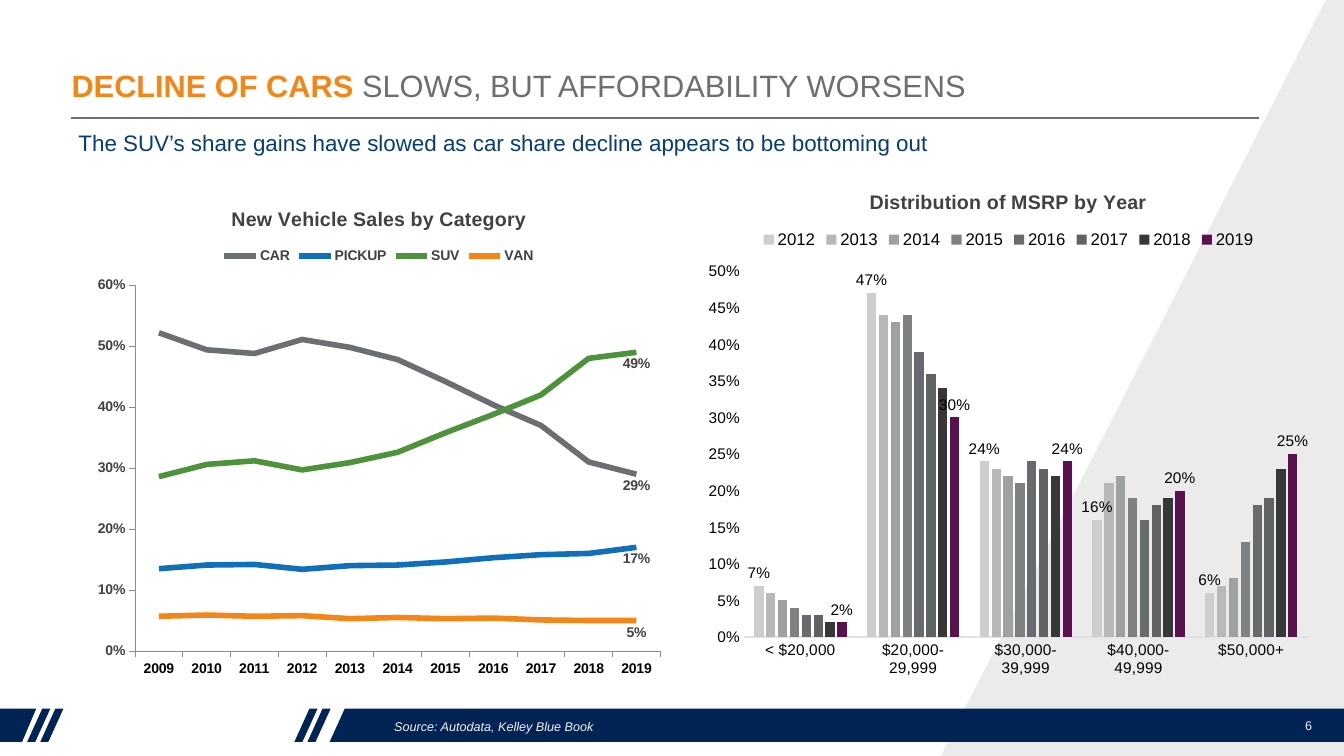
from dataclasses import dataclass

import pptx
import pptx.chart.chart
import pptx.chart.data
import pptx.dml.color
import pptx.enum.chart
import pptx.enum.text
import pptx.oxml.ns
import pptx.slide
import pptx.text.text
import pptx.util
from lxml import etree

Inches = pptx.util.Inches
Pt = pptx.util.Pt
qn = pptx.oxml.ns.qn
ChartType = pptx.enum.chart.XL_CHART_TYPE
LabelPosition = pptx.enum.chart.XL_LABEL_POSITION
TickMark = pptx.enum.chart.XL_TICK_MARK
Anchor = pptx.enum.text.MSO_ANCHOR
Align = pptx.enum.text.PP_ALIGN


@dataclass(frozen=True)
class Theme:
    font: str = "Arial"
    navy: str = "022454"
    blue: str = "073D76"
    orange: str = "F38617"
    grey: str = "6C6F71"
    wedge: str = "D9D9D9"
    pale: str = "F2F2F2"
    ink: str = "000000"
    soft_ink: str = "414141"
    axis: str = "8C8C8C"
    baseline: str = "E2E2E2"
    title_size: float = 22
    subtitle_size: float = 16
    chart_title_size: float = 14
    legend_size: float = 12
    bar_size: float = 11
    line_size: float = 10
    small_size: float = 9


@dataclass(frozen=True)
class Series:
    name: str
    color: str
    values: tuple[float, ...]


@dataclass(frozen=True)
class ChartSpec:
    """One chart; title_at, legend_at and plot_at are inches from the chart's corner."""
    title: str
    kind: ChartType
    box: tuple[float, float, float, float]
    categories: tuple[str, ...]
    series: tuple[Series, ...]
    size: float
    legend_size: float
    color: str
    bold: bool
    tick: TickMark
    top: float
    step: float
    category_line: str
    value_line: str | None
    title_at: tuple[float, float]
    legend_at: tuple[float, float]
    plot_at: tuple[float, float, float, float]


THEME = Theme()
BAND_TOP, BAND_BOTTOM = 7.03, 7.36
STRIPE_LEFTS = (0.27, 0.4, 2.92, 3.05)

SALES = ChartSpec(
    "New Vehicle Sales by Category", ChartType.LINE, (0.86, 1.86, 5.8, 4.95),
    tuple(str(year) for year in range(2009, 2020)),
    (
        Series("CAR", THEME.grey, (0.522, 0.494, 0.488, 0.511, 0.498, 0.478, 0.442, 0.404, 0.37, 0.31, 0.29)),
        Series("PICKUP", "116FBA", (0.135, 0.141, 0.142, 0.134, 0.14, 0.141, 0.146, 0.153, 0.158, 0.16, 0.17)),
        Series("SUV", "4E933B", (0.286, 0.306, 0.312, 0.297, 0.309, 0.326, 0.358, 0.388, 0.42, 0.48, 0.49)),
        Series("VAN", THEME.orange, (0.057, 0.059, 0.057, 0.058, 0.053, 0.055, 0.053, 0.054, 0.051, 0.05, 0.05)),
    ),
    THEME.line_size, THEME.line_size, THEME.soft_ink, True, TickMark.OUTSIDE, 0.6, 0.1,
    THEME.axis, THEME.axis, (1.4, 0.15), (1.32, 0.56), (0.48, 0.97, 5.21, 3.63),
)

PRICES = ChartSpec(
    "Distribution of MSRP by Year", ChartType.COLUMN_CLUSTERED, (6.9, 1.69, 6.21, 5.12),
    ("< $20,000", "$20,000-\n29,999", "$30,000-\n39,999", "$40,000-\n49,999", "$50,000+"),
    (
        Series("2012", "CDCDCE", (0.07, 0.47, 0.24, 0.16, 0.06)),
        Series("2013", "B7B8B9", (0.06, 0.44, 0.23, 0.21, 0.07)),
        Series("2014", "9FA0A1", (0.05, 0.43, 0.22, 0.22, 0.08)),
        Series("2015", "7E8182", (0.04, 0.44, 0.21, 0.19, 0.13)),
        Series("2016", "686B6D", (0.03, 0.39, 0.24, 0.16, 0.18)),
        Series("2017", "606364", (0.03, 0.36, 0.23, 0.18, 0.19)),
        Series("2018", "363838", (0.02, 0.34, 0.22, 0.19, 0.23)),
        Series("2019", "59124D", (0.02, 0.3, 0.24, 0.2, 0.25)),
    ),
    THEME.bar_size, THEME.legend_size, THEME.ink, False, TickMark.NONE, 0.5, 0.05,
    THEME.baseline, None, (1.69, 0.15), (0.62, 0.56), (0.48, 1, 5.59, 3.63),
)


def rgb(color: str) -> pptx.dml.color.RGBColor:
    return pptx.dml.color.RGBColor.from_string(color)


def style(font: pptx.text.text.Font, size: float, color: str, bold: bool = False, italic: bool = False) -> None:
    font.name, font.size, font.bold, font.italic = THEME.font, Pt(size), bold, italic
    font.color.rgb = rgb(color)


def move(shape, left: float, top: float, width: float, height: float) -> None:
    shape.left, shape.top, shape.width, shape.height = map(Inches, (left, top, width, height))


def draw_outline(page: pptx.slide.Slide, points: list[tuple[float, float]], color: str):
    """Draw a filled outline; the builder counts whole hundredths of an inch."""
    start, *others = [(round(x * 100), round(y * 100)) for x, y in points]
    builder = page.shapes.build_freeform(*start, scale=Inches(0.01))
    builder.add_line_segments(others, close=True)
    shape = builder.convert_to_shape()
    shape.shadow.inherit = False
    shape.fill.solid()
    shape.fill.fore_color.rgb = rgb(color)
    shape.line.fill.background()
    return shape


def draw_backdrop(page: pptx.slide.Slide) -> None:
    wedge = draw_outline(page, [(13.15, 0), (13.33, 0), (13.33, 7.5), (9.33, 7.5)], THEME.wedge)
    etree.SubElement(next(wedge.element.iter(qn("a:srgbClr"))), qn("a:alpha"), val="50000")
    bands = [[(x + 0.15, BAND_TOP), (x + 0.23, BAND_TOP), (x + 0.08, BAND_BOTTOM), (x, BAND_BOTTOM)]
             for x in STRIPE_LEFTS]
    bands.append([(0, BAND_TOP), (0.36, BAND_TOP), (0.22, BAND_BOTTOM), (0, BAND_BOTTOM)])
    bands.append([(3.42, BAND_TOP), (13.33, BAND_TOP), (13.33, BAND_BOTTOM), (3.27, BAND_BOTTOM)])
    for band in bands:
        draw_outline(page, band, THEME.navy)
    rule = page.shapes.add_connector(1, Inches(0.7), Inches(1.17), Inches(12.49), Inches(1.17))
    rule.line.color.rgb = rgb(THEME.grey)
    rule.line.width = Pt(1)
    etree.SubElement(rule.element.spPr, qn("a:effectLst"))


def write_title(page: pptx.slide.Slide) -> None:
    title = page.shapes.title
    move(title, 0.61, 0.43, 11.86, 0.83)
    title.text_frame.vertical_anchor = Anchor.MIDDLE
    para = title.text_frame.paragraphs[0]
    para.alignment = Align.LEFT
    for text, color, bold in (("DECLINE OF CARS ", THEME.orange, True),
                              ("SLOWS, BUT AFFORDABILITY WORSENS", THEME.grey, False)):
        span = para.add_run()
        span.text = text
        style(span.font, THEME.title_size, color, bold)


def write_source(page: pptx.slide.Slide) -> None:
    body = page.placeholders[1]
    move(body, 3.81, 7.04, 7.91, 0.33)
    body.text_frame.text = "Source: Autodata, Kelley Blue Book"
    body.text_frame.vertical_anchor = Anchor.MIDDLE
    para = body.text_frame.paragraphs[0]
    properties = para._p.get_or_add_pPr()
    properties.set("marL", "0")
    properties.set("indent", "0")
    etree.SubElement(properties, qn("a:buNone"))
    para.space_before = Pt(0)
    style(para.runs[0].font, THEME.small_size, THEME.pale, italic=True)


def add_text(page: pptx.slide.Slide, text: str, at: tuple[float, float, float, float],
             size: float, color: str, anchor: Anchor, align: Align) -> None:
    box = page.shapes.add_textbox(*map(Inches, at))
    frame = box.text_frame
    frame.word_wrap = True
    frame.vertical_anchor = anchor
    frame.text = text
    frame.paragraphs[0].alignment = align
    style(frame.paragraphs[0].runs[0].font, size, color)


def place_part(part, at: tuple[float, ...], spec: ChartSpec) -> None:
    """Fix a chart part at inches from the chart's corner."""
    for old in part.findall(qn("c:layout")):
        part.remove(old)
    layout = etree.Element(qn("c:layout"))
    manual = etree.SubElement(layout, qn("c:manualLayout"))
    if len(at) == 4:
        etree.SubElement(manual, qn("c:layoutTarget"), val="inner")
    for tag in ("c:xMode", "c:yMode"):
        etree.SubElement(manual, qn(tag), val="edge")
    for tag, length, whole in zip("xywh", at, spec.box[2:] * 2):
        etree.SubElement(manual, qn(f"c:{tag}"), val=str(length / whole))
    overlay = part.find(qn("c:overlay"))
    if overlay is None:
        part.insert(0, layout)
    else:
        overlay.addprevious(layout)


def format_axes(chart: pptx.chart.chart.Chart, spec: ChartSpec) -> None:
    for axis, text, line in ((chart.category_axis, THEME.ink, spec.category_line),
                             (chart.value_axis, spec.color, spec.value_line)):
        axis.has_major_gridlines = False
        axis.major_tick_mark, axis.minor_tick_mark = spec.tick, TickMark.NONE
        style(axis.tick_labels.font, spec.size, text, spec.bold)
        if line:
            axis.format.line.color.rgb = rgb(line)
            axis.format.line.width = Pt(0.75)
        else:
            axis.format.line.fill.background()
    values = chart.value_axis
    values.minimum_scale, values.maximum_scale, values.major_unit = 0, spec.top, spec.step
    values.tick_labels.number_format = "0%"
    values.tick_labels.number_format_is_linked = False


def draw_chart(page: pptx.slide.Slide, spec: ChartSpec) -> pptx.chart.chart.Chart:
    data = pptx.chart.data.CategoryChartData(number_format="0%")
    data.categories = spec.categories
    for series in spec.series:
        data.add_series(series.name, series.values)
    chart = page.shapes.add_chart(spec.kind, *map(Inches, spec.box), data).chart
    style(chart.font, spec.size, spec.color)
    chart.has_title = True
    chart.chart_title.text_frame.text = spec.title
    style(chart.chart_title.text_frame.paragraphs[0].runs[0].font, THEME.chart_title_size, THEME.soft_ink, True)
    chart.has_legend = True
    chart.legend.position = pptx.enum.chart.XL_LEGEND_POSITION.TOP
    chart.legend.include_in_layout = False
    style(chart.legend.font, spec.legend_size, spec.color, spec.bold)
    chart.plots[0].vary_by_categories = False
    format_axes(chart, spec)
    place_part(chart.chart_title._element, spec.title_at, spec)
    place_part(chart.legend._element, spec.legend_at, spec)
    place_part(next(chart.element.iter(qn("c:plotArea"))), spec.plot_at, spec)
    return chart


def draw_sales(page: pptx.slide.Slide) -> None:
    for line, series in zip(draw_chart(page, SALES).plots[0].series, SALES.series):
        line.smooth = False
        line.marker.style = pptx.enum.chart.XL_MARKER_STYLE.NONE
        line.format.line.color.rgb = rgb(series.color)
        line.format.line.width = Pt(4)
        line.data_labels.show_value = False
        label = line.points[len(SALES.categories) - 1].data_label
        style(label.font, SALES.size, SALES.color, True)
        label.position = LabelPosition.BELOW


def draw_prices(page: pptx.slide.Slide) -> None:
    plot = draw_chart(page, PRICES).plots[0]
    plot.gap_width, plot.overlap = 219, -27
    for bars, series in zip(plot.series, PRICES.series):
        bars.format.fill.solid()
        bars.format.fill.fore_color.rgb = rgb(series.color)
        if series in (PRICES.series[0], PRICES.series[-1]):
            labels = bars.data_labels
            labels.show_value = True
            labels.number_format, labels.number_format_is_linked = "0%", False
            labels.position = LabelPosition.OUTSIDE_END
            style(labels.font, PRICES.size, PRICES.color)


def main() -> None:
    deck = pptx.Presentation()
    deck.slide_width, deck.slide_height = Inches(13.33), Inches(7.5)
    page = deck.slides.add_slide(deck.slide_layouts[1])
    write_title(page)
    write_source(page)
    texts = list(page.placeholders)
    draw_backdrop(page)
    for text in texts:  # bring the placeholders in front of the backdrop
        page.shapes.element.append(text.element)
    add_text(page, "6", (12.74, 7, 0.48, 0.4), THEME.small_size, THEME.pale, Anchor.MIDDLE, Align.CENTER)
    add_text(page, "The SUV’s share gains have slowed as car share decline appears to be bottoming out",
             (0.68, 1.23, 11.88, 0.4), THEME.subtitle_size, THEME.blue, Anchor.TOP, Align.LEFT)
    draw_prices(page)
    draw_sales(page)
    deck.save("out.pptx")


if __name__ == "__main__":
    main()
